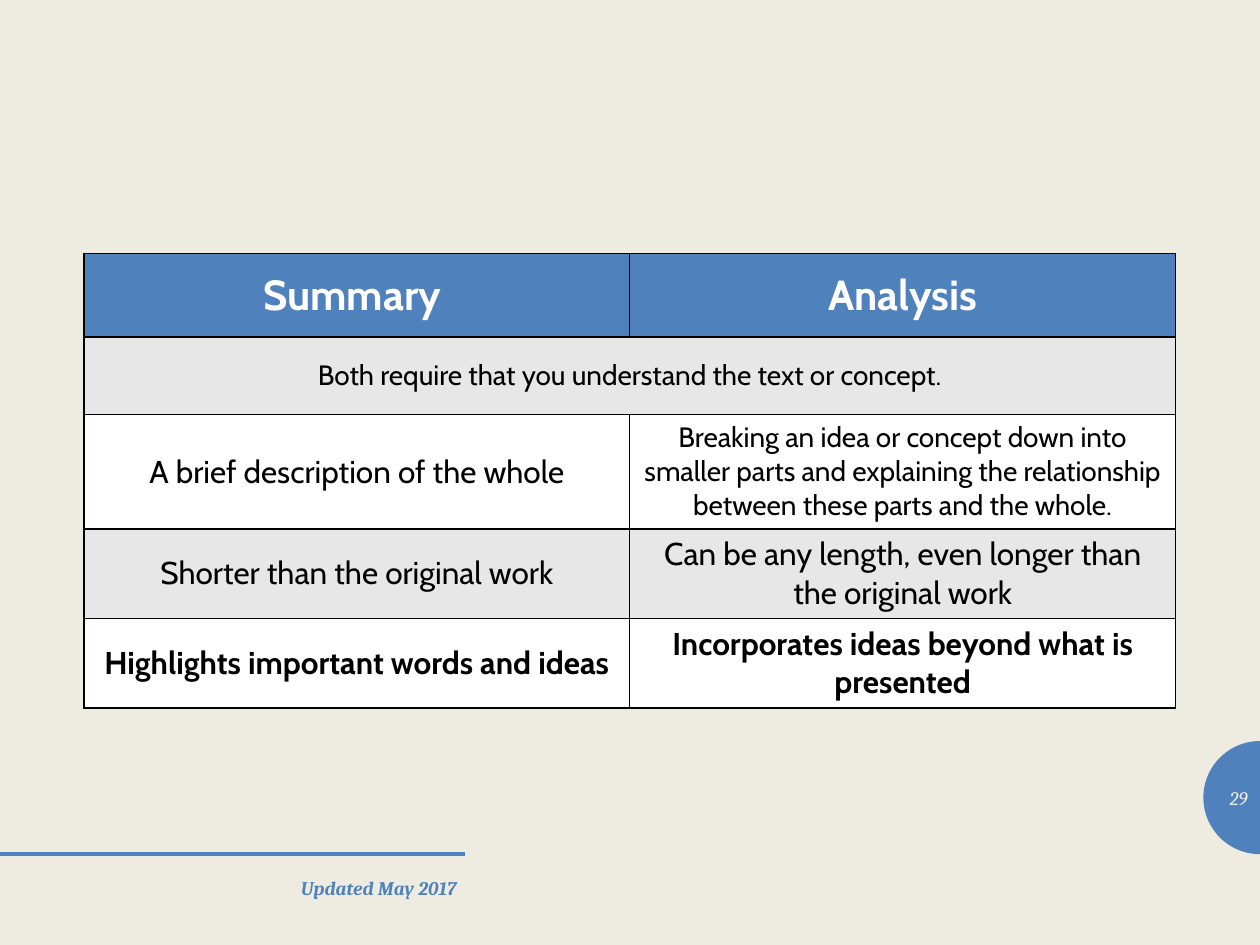
"""Build a slide with a table comparing summary and analysis."""
from math import cos, pi, sin

from lxml.etree import SubElement
from pptx import Presentation
from pptx.dml.color import RGBColor
from pptx.enum.shapes import MSO_CONNECTOR
from pptx.enum.text import MSO_ANCHOR, PP_ALIGN
from pptx.oxml import parse_xml
from pptx.oxml.ns import nsdecls, qn
from pptx.util import Cm, Pt

COLORS = {
    "paper": "EEECE1",
    "blue": "4F81BD",
    "grey": "E7E7E7",
    "white": "FFFFFF",
    "black": "000000",
}


def rgb(name):
    return RGBColor.from_string(COLORS[name])


def write(tf, text, size=18, font="Cabin", color="black", bold=False,
          italic=False, align=PP_ALIGN.CENTER):
    tf.word_wrap = True
    p = tf.paragraphs[0]
    p.alignment = align
    r = p.add_run()
    r.text = text
    r.font.size = Pt(size)
    r.font.name = font
    r.font.bold = bold
    r.font.italic = italic
    r.font.color.rgb = rgb(color)


prs = Presentation()
prs.slide_width, prs.slide_height = Cm(25.4), Cm(19.05)
s = prs.slides.add_slide(prs.slide_layouts[6])
s.background.fill.solid()
s.background.fill.fore_color.rgb = rgb("paper")

cx, cy, radius, steps = 25.4, 16.08, 1.14, 48
angles = [pi / 2 + pi * i / steps for i in range(steps + 1)]
arc = [(Cm(cx + radius * cos(a)), Cm(cy + radius * sin(a))) for a in angles]
fb = s.shapes.build_freeform(*arc[0])
fb.add_line_segments(arc[1:], close=True)
sp = fb.convert_to_shape()
sp.shadow.inherit = False
sp.fill.solid()
sp.fill.fore_color.rgb = rgb("blue")
sp.line.fill.background()

rule = s.shapes.add_connector(
    MSO_CONNECTOR.STRAIGHT, Cm(0), Cm(17.22), Cm(9.37), Cm(17.22))
rule.line.color.rgb = rgb("blue")
rule.line.width = Pt(2)
SubElement(rule._element.spPr, qn("a:effectLst"))

rows = [
    (1.68, "blue", [("Summary ", 24), ("Analysis", 24)]),
    (1.57, "grey", [("Both require that you understand the text or concept.", 16)]),
    (1.57, "white", [
        ("A brief description of the whole", 18),
        ("Breaking an idea or concept down into smaller parts and explaining "
         "the relationship between these parts and the whole.", 16)]),
    (1.75, "grey", [
        ("Shorter than the original work", 18),
        ("Can be any length, even longer than the original work", 18)]),
    (1.57, "white", [
        ("Highlights important words and ideas", 18),
        ("Incorporates ideas beyond what is presented", 18)]),
]
height = sum(row[0] for row in rows)
table = s.shapes.add_table(
    len(rows), 2, Cm(1.69), Cm(5.11), Cm(22.01), Cm(height)).table
for i, (row_height, fill, texts) in enumerate(rows):
    table.rows[i].height = Cm(row_height)
    if len(texts) == 1:
        table.cell(i, 0).merge(table.cell(i, 1))
    for j, (text, size) in enumerate(texts):
        write(table.cell(i, j).text_frame, text, size=size,
              color="white" if i == 0 else "black",
              bold=i in (0, len(rows) - 1))
    for cell in table.rows[i].cells:
        cell.vertical_anchor = MSO_ANCHOR.MIDDLE
        cell.fill.solid()
        cell.fill.fore_color.rgb = rgb(fill)
        tcPr = cell._tc.get_or_add_tcPr()
        for k, side in enumerate("LRTB"):
            tcPr.insert(k, parse_xml(
                f'<a:ln{side} {nsdecls("a")} w="12700"><a:solidFill>'
                f'<a:srgbClr val="{COLORS["black"]}"/></a:solidFill></a:ln{side}>'))

labels = [
    ("Updated May 2017 ", 1.6, 17.55, 7.95, "blue", True, MSO_ANCHOR.TOP),
    ("29", 24.26, 15.57, 1.14, "paper", False, MSO_ANCHOR.MIDDLE),
]
for text, left, top, width, color, bold, anchor in labels:
    tf = s.shapes.add_textbox(Cm(left), Cm(top), Cm(width), Cm(1.02)).text_frame
    tf.vertical_anchor = anchor
    write(tf, text, size=11, font="Cambria", color=color, bold=bold,
          italic=True, align=PP_ALIGN.RIGHT)

prs.save("out.pptx")
